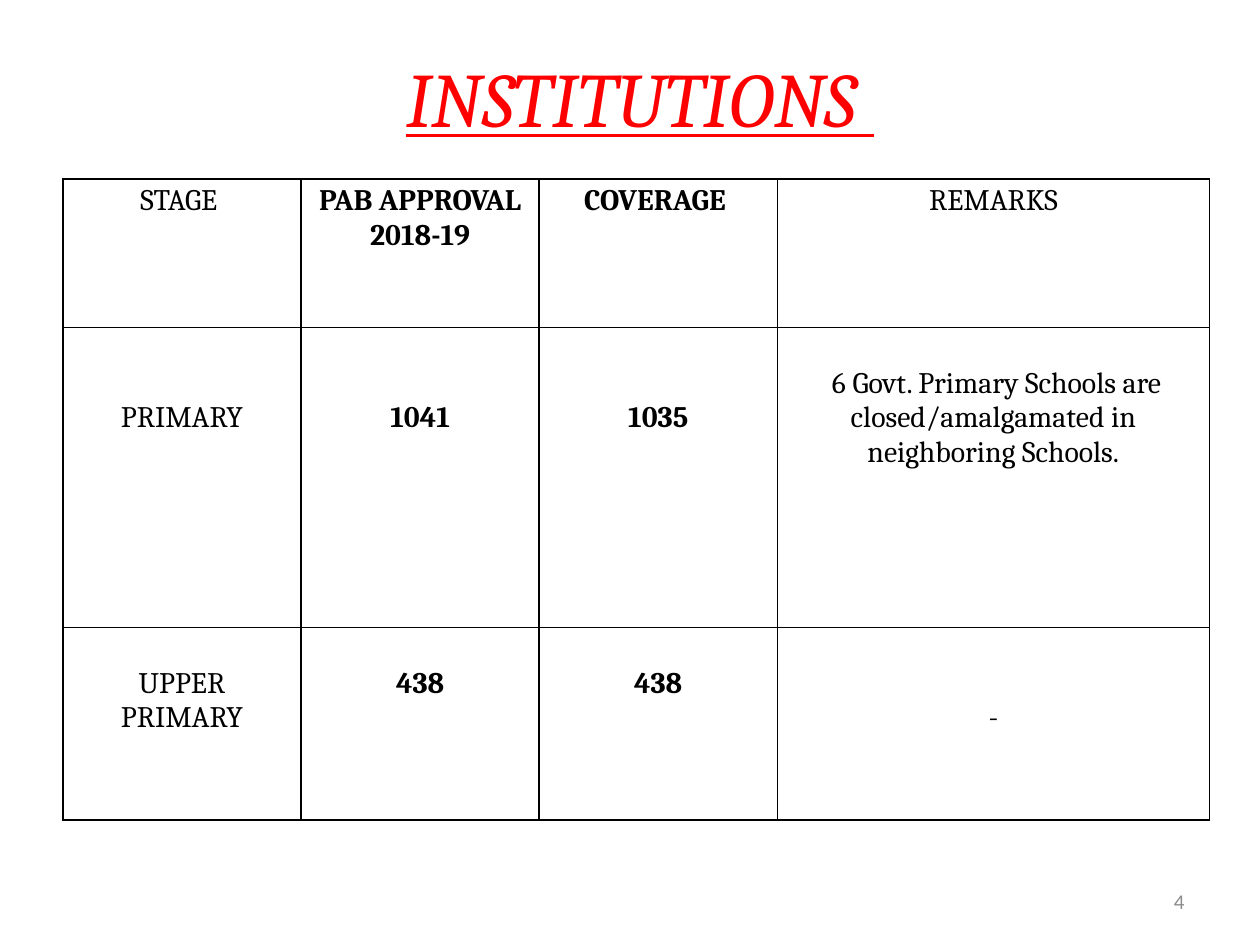
from lxml import etree
from pptx import Presentation
from pptx import util as u
from pptx.dml.color import RGBColor
from pptx.enum import text
from pptx.oxml.ns import qn

RED = RGBColor(0xFF, 0, 0)
BLACK = RGBColor(0, 0, 0)
GRAY = RGBColor(0x8C, 0x8C, 0x8C)
SERIF, SANS = "Cambria", "Calibri"

# Content: each cell is its paragraphs and how many lines it sits below the top
TITLE = "INSTITUTIONS "
ROWS = [
    [(["STAGE "], 0), (["PAB APPROVAL", "2018-19"], 0),
     (["COVERAGE "], 0), (["REMARKS"], 0)],
    [(["PRIMARY"], 2), (["1041"], 2), (["1035"], 2),
     ([" 6 Govt. Primary Schools are closed/amalgamated in "
       "neighboring Schools."], 1)],
    [(["UPPER PRIMARY"], 1), (["438"], 1), (["438"], 1), (["-"], 2)],
]
BOLD = (1, 2)
WIDTHS = (1.89, 1.89, 1.89, 3.43)
HEIGHTS = (1.18, 2.38, 1.53)
LINE, PAD = 0.27, 0.04


def place(shape, left, top, width, height):
    shape.left, shape.top = u.Inches(left), u.Inches(top)
    shape.width, shape.height = u.Inches(width), u.Inches(height)


def write(para, words, size, face, color, align, bold=False):
    para.alignment = align
    run = para.add_run()
    run.text = words
    font = run.font
    font.size, font.name, font.bold = u.Pt(size), face, bold
    font.color.rgb = color
    return font


def frame(cell):
    """Draw a one-point black line on every side of a cell."""
    props = cell._tc.get_or_add_tcPr()
    for side in ("lnL", "lnR", "lnT", "lnB"):
        line = etree.SubElement(props, qn("a:" + side), w=str(u.Pt(1)))
        fill = etree.SubElement(line, qn("a:solidFill"))
        etree.SubElement(fill, qn("a:srgbClr"), val=str(BLACK))


def main():
    deck = Presentation()
    deck.slide_width, deck.slide_height = u.Inches(10), u.Inches(7.5)
    slide = deck.slides.add_slide(deck.slide_layouts[5])
    mid = text.PP_ALIGN.CENTER

    # Title
    title = slide.shapes.title
    place(title, 0.58, 0.26, 9, 1.02)
    title.text_frame.vertical_anchor = text.MSO_ANCHOR.MIDDLE
    font = write(title.text_frame.paragraphs[0], TITLE, 44, SERIF, RED, mid)
    font.italic = font.underline = True

    # Table
    table = slide.shapes.add_table(
        len(ROWS), len(WIDTHS), u.Inches(0.5), u.Inches(1.42),
        u.Inches(sum(WIDTHS)), u.Inches(sum(HEIGHTS))).table
    table.first_row = table.horz_banding = False
    for col, width in zip(table.columns, WIDTHS):
        col.width = u.Inches(width)
    for row, height in zip(table.rows, HEIGHTS):
        row.height = u.Inches(height)
    for r, row in enumerate(ROWS):
        for c, (lines, drop) in enumerate(row):
            cell = table.cell(r, c)
            frame(cell)
            cell.fill.background()
            cell.margin_left = cell.margin_right = u.Inches(0.1)
            cell.margin_top = u.Inches(PAD + drop * LINE)
            cell.margin_bottom = u.Inches(PAD)
            body = cell.text_frame
            for i, words in enumerate(lines):
                para = body.add_paragraph() if i else body.paragraphs[0]
                write(para, words, 17, SERIF, BLACK, mid, c in BOLD)

    # Page number
    box = slide.shapes.add_textbox(0, 0, 0, 0)
    place(box, 7.17, 6.95, 2.33, 0.4)
    box.text_frame.word_wrap = True
    box.text_frame.vertical_anchor = text.MSO_ANCHOR.MIDDLE
    write(box.text_frame.paragraphs[0], "4", 12, SANS, GRAY,
          text.PP_ALIGN.RIGHT)

    deck.save("out.pptx")


if __name__ == "__main__":
    main()
